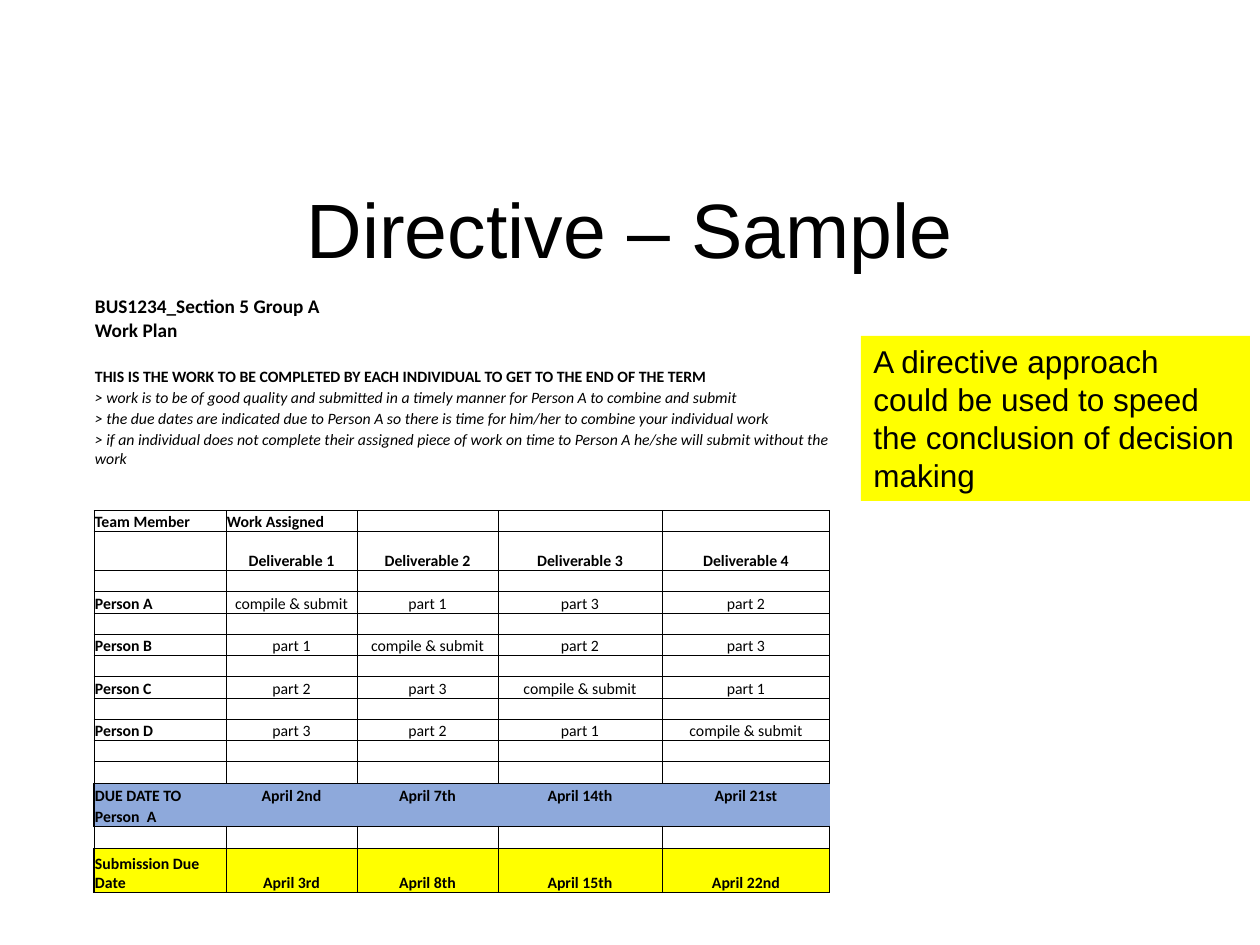
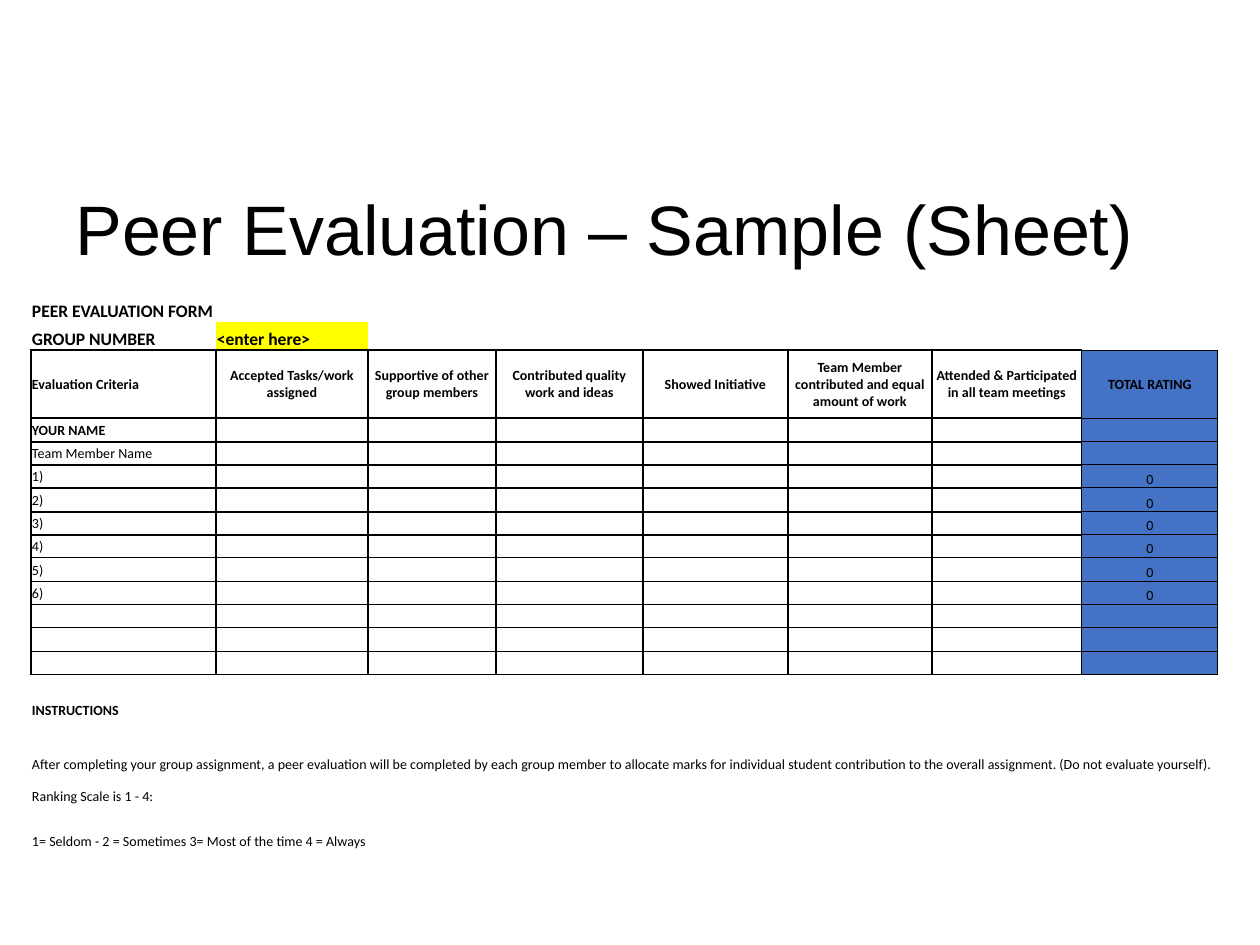
from lxml import etree
from pptx import Presentation
from pptx.dml.color import RGBColor
from pptx.enum.text import MSO_ANCHOR, PP_ALIGN
from pptx.oxml.ns import qn
from pptx.util import Pt

LEFT, CENTER = PP_ALIGN.LEFT, PP_ALIGN.CENTER
MIDDLE, BOTTOM = MSO_ANCHOR.MIDDLE, MSO_ANCHOR.BOTTOM

PX_PER_INCH = 126
EMU_PER_INCH = 914400
BLACK, YELLOW = "000000", "FFFF00"
DUE_BLUE, TOTAL_BLUE = "8EA9DB", "4472C4"
TITLE_FONT, TABLE_FONT = "Arial", "Calibri"
THIN, THICK = 0.5, 1
BORDER_TAGS = ("a:lnL", "a:lnR", "a:lnT", "a:lnB")

WORK_RULES = [
    "> work is to be of good quality and submitted in a timely manner for Person A to combine and submit",
    "> the due dates are indicated due to Person A so there is time for him/her to combine your individual work",
    "> if an individual does not complete their assigned piece of work on time to Person A he/she will submit without the work",
]
PARTS = {
    "Person A": ["compile & submit", "part 1", "part 3", "part 2"],
    "Person B": ["part 1", "compile & submit", "part 2", "part 3"],
    "Person C": ["part 2", "part 3", "compile & submit", "part 1"],
    "Person D": ["part 3", "part 2", "part 1", "compile & submit"],
}
CRITERIA = [
    "Accepted Tasks/work assigned",
    "Supportive of other group members",
    "Contributed quality work and ideas",
    "Showed Initiative",
    "Team Member contributed and equal amount of work",
    "Attended & Participated in all team meetings",
    "TOTAL RATING",
]


def px(length):
    return round(length * EMU_PER_INCH / PX_PER_INCH)


def color(value):
    return RGBColor.from_string(value)


def format_runs(paragraph, font_name, size, bold=False, italic=False):
    for run in paragraph.runs:
        run.font.name = font_name
        run.font.size = Pt(size)
        run.font.bold = bold
        run.font.italic = italic
        run.font.color.rgb = color(BLACK)


def add_text(slide, text, box, size, align=LEFT, anchor=MIDDLE, wrap=True):
    shape = slide.shapes.add_textbox(*map(px, box))
    text_frame = shape.text_frame
    text_frame.text = text
    text_frame.word_wrap = wrap
    text_frame.vertical_anchor = anchor
    for paragraph in text_frame.paragraphs:
        paragraph.alignment = align
        format_runs(paragraph, TITLE_FONT, size)
    return shape


def add_title(slide, text, width, size, align=LEFT):
    add_text(slide, text, (63, 189, width, 78), size, align)


def set_borders(cell, left=0, right=0, top=0, bottom=0):
    properties = cell._tc.get_or_add_tcPr()
    for index, (tag, width) in enumerate(zip(BORDER_TAGS, (left, right, top, bottom))):
        for old_line in properties.findall(qn(tag)):
            properties.remove(old_line)
        line = etree.Element(qn(tag), w=str(Pt(width)))
        if width:
            fill = etree.SubElement(line, qn("a:solidFill"))
            etree.SubElement(fill, qn("a:srgbClr"), val=BLACK)
        else:
            etree.SubElement(line, qn("a:noFill"))
        properties.insert(index, line)


def add_grid(slide, left, top, widths, heights, size):
    frame = slide.shapes.add_table(
        len(heights), len(widths), px(left), px(top), px(sum(widths)), px(sum(heights))
    )
    table = frame.table
    table.first_row = False
    table.horz_banding = False
    for column, width in zip(table.columns, widths):
        column.width = px(width)
    for row, height in zip(table.rows, heights):
        row.height = px(height)
    for cell in table.iter_cells():
        cell.margin_left = cell.margin_right = cell.margin_top = px(1)
        cell.margin_bottom = 0
        cell.fill.background()
        set_borders(cell)
        paragraph = cell.text_frame.paragraphs[0]
        paragraph._p.get_or_add_endParaRPr().set("sz", str(size * 100))
    return table


def write_cell(table, row, column, text, size, bold=False, italic=False,
               align=LEFT, anchor=BOTTOM, span=1):
    cell = table.cell(row, column)
    if span > 1:
        cell.merge(table.cell(row, column + span - 1))
    cell.text_frame.text = text
    cell.vertical_anchor = anchor
    paragraph = cell.text_frame.paragraphs[0]
    paragraph.alignment = align
    format_runs(paragraph, TABLE_FONT, size, bold, italic)


def write_row(table, row, label, values, size, bold_label=True, bold_values=False, anchor=BOTTOM):
    write_cell(table, row, 0, label, size, bold_label, anchor=anchor)
    for column, value in enumerate(values, 1):
        write_cell(table, row, column, value, size, bold_values, align=CENTER, anchor=anchor)


def frame_cells(table, rows, columns, fill=None, **borders):
    for row in rows:
        for column in columns:
            cell = table.cell(row, column)
            set_borders(cell, **borders)
            if fill:
                cell.fill.solid()
                cell.fill.fore_color.rgb = color(fill)


def add_work_plan(slide):
    size = 9
    heights = [48, 24, 21, 21, 21, 40, 21, 21] + [21, 21, 21, 22] * 3 + [22, 21, 22, 44]
    table = add_grid(slide, 94, 294, [132, 131, 141, 164, 168], heights, size)
    columns = range(5)
    sides = {"left": THIN, "right": THIN}

    write_cell(table, 0, 0, "BUS1234_Section 5 Group A Work Plan", 11, bold=True, span=2)
    write_cell(table, 2, 0,
               "THIS IS THE WORK TO BE COMPLETED BY EACH INDIVIDUAL TO GET TO THE END OF THE TERM",
               size, bold=True, span=5)
    for row, rule in enumerate(WORK_RULES, 3):
        write_cell(table, row, 0, rule, size, italic=True, span=5)

    write_cell(table, 8, 0, "Team Member", size, bold=True)
    write_cell(table, 8, 1, "Work Assigned", size, bold=True)
    write_row(table, 9, "", [f"Deliverable {number}" for number in range(1, 5)], size, bold_values=True)
    for index, (person, parts) in enumerate(PARTS.items()):
        write_row(table, 11 + 2 * index, person, parts, size)
    write_row(table, 20, "DUE DATE TO", ["April 2nd", "April 7th", "April 14th", "April 21st"],
              size, bold_values=True)
    write_cell(table, 21, 0, "Person  A", size, bold=True)
    write_row(table, 23, "Submission Due Date", ["April 3rd", "April 8th", "April 15th", "April 22nd"],
              size, bold_values=True)

    frame_cells(table, [7], columns, bottom=THIN)
    frame_cells(table, range(8, 19), columns, top=THIN, bottom=THIN, **sides)
    frame_cells(table, [19], columns, top=THIN, bottom=THICK, **sides)
    for column in columns:
        left = 0 if column else THICK
        frame_cells(table, [20], [column], DUE_BLUE, left=left, top=THICK)
        frame_cells(table, [21], [column], DUE_BLUE, left=left, bottom=THICK)
    frame_cells(table, [22], columns, top=THICK, bottom=THICK, **sides)
    frame_cells(table, [23], columns, YELLOW, top=THICK, bottom=THICK, **sides)
    set_borders(table.cell(23, 0), left=THICK, right=THIN, top=THICK, bottom=THICK)


def add_peer_form(slide):
    size = 8
    heights = [28, 28, 68] + [24, 23, 23] * 3 + [24, 23] + [23, 22, 23, 43, 22, 43]
    table = add_grid(slide, 31, 294, [185, 152, 128, 147, 145, 144, 150, 136], heights, size)
    form_rows = range(2, 14)

    write_cell(table, 0, 0, "PEER EVALUATION FORM", 10, bold=True, span=2)
    write_cell(table, 1, 0, "GROUP NUMBER", 10, bold=True)
    write_cell(table, 1, 1, "<enter here>", 10, bold=True)
    write_row(table, 2, "Evaluation Criteria", CRITERIA, size, bold_values=True, anchor=MIDDLE)
    write_cell(table, 3, 0, "YOUR NAME", size, bold=True, anchor=MIDDLE)
    write_cell(table, 4, 0, "Team Member Name", size, anchor=MIDDLE)
    for number in range(1, 7):
        write_cell(table, 4 + number, 0, f"{number})", size, anchor=MIDDLE)
        write_cell(table, 4 + number, 7, "0", size, align=CENTER)

    write_cell(table, 15, 0, "INSTRUCTIONS", size, bold=True)
    write_cell(table, 17, 0,
               "After completing your group assignment, a peer evaluation will be completed by each group "
               "member to allocate marks for individual student contribution to the overall assignment. "
               "(Do not evaluate yourself).", size, anchor=MIDDLE, span=8)
    write_cell(table, 18, 0, "Ranking Scale is 1 - 4:", size, anchor=MIDDLE)
    write_cell(table, 19, 0, "1= Seldom - 2 = Sometimes 3= Most of the time 4 = Always", size, span=2)

    frame_cells(table, [1], range(7), bottom=THICK)
    frame_cells(table, [1], [7], bottom=THIN)
    frame_cells(table, [1], [1], YELLOW, bottom=THICK)
    frame_cells(table, form_rows, range(6), left=THICK, right=THICK, top=THICK, bottom=THICK)
    frame_cells(table, form_rows, [6], left=THICK, right=THIN, top=THICK, bottom=THICK)
    frame_cells(table, form_rows, [7], TOTAL_BLUE, left=THIN, right=THIN, top=THIN, bottom=THIN)
    frame_cells(table, [14], range(7), top=THICK)
    frame_cells(table, [14], [7], top=THIN)


def add_directive_slide(presentation, layout):
    slide = presentation.slides.add_slide(layout)
    add_title(slide, "Directive – Sample", 1134, 44, CENTER)
    add_work_plan(slide)
    note = add_text(
        slide,
        "A directive approach\ncould be used to speed\nthe conclusion of decision\nmaking",
        (861, 336, 389, 165), 18, anchor=MSO_ANCHOR.TOP, wrap=False,
    )
    note.fill.solid()
    note.fill.fore_color.rgb = color(YELLOW)


def add_peer_evaluation_slide(presentation, layout):
    slide = presentation.slides.add_slide(layout)
    add_title(slide, "Peer Evaluation – Sample (Sheet)", 1155, 40)
    add_peer_form(slide)


def main():
    presentation = Presentation()
    presentation.slide_width = px(1260)
    presentation.slide_height = px(945)
    blank_layout = presentation.slide_layouts[6]
    add_directive_slide(presentation, blank_layout)
    add_peer_evaluation_slide(presentation, blank_layout)
    presentation.save("out.pptx")


if __name__ == "__main__":
    main()
